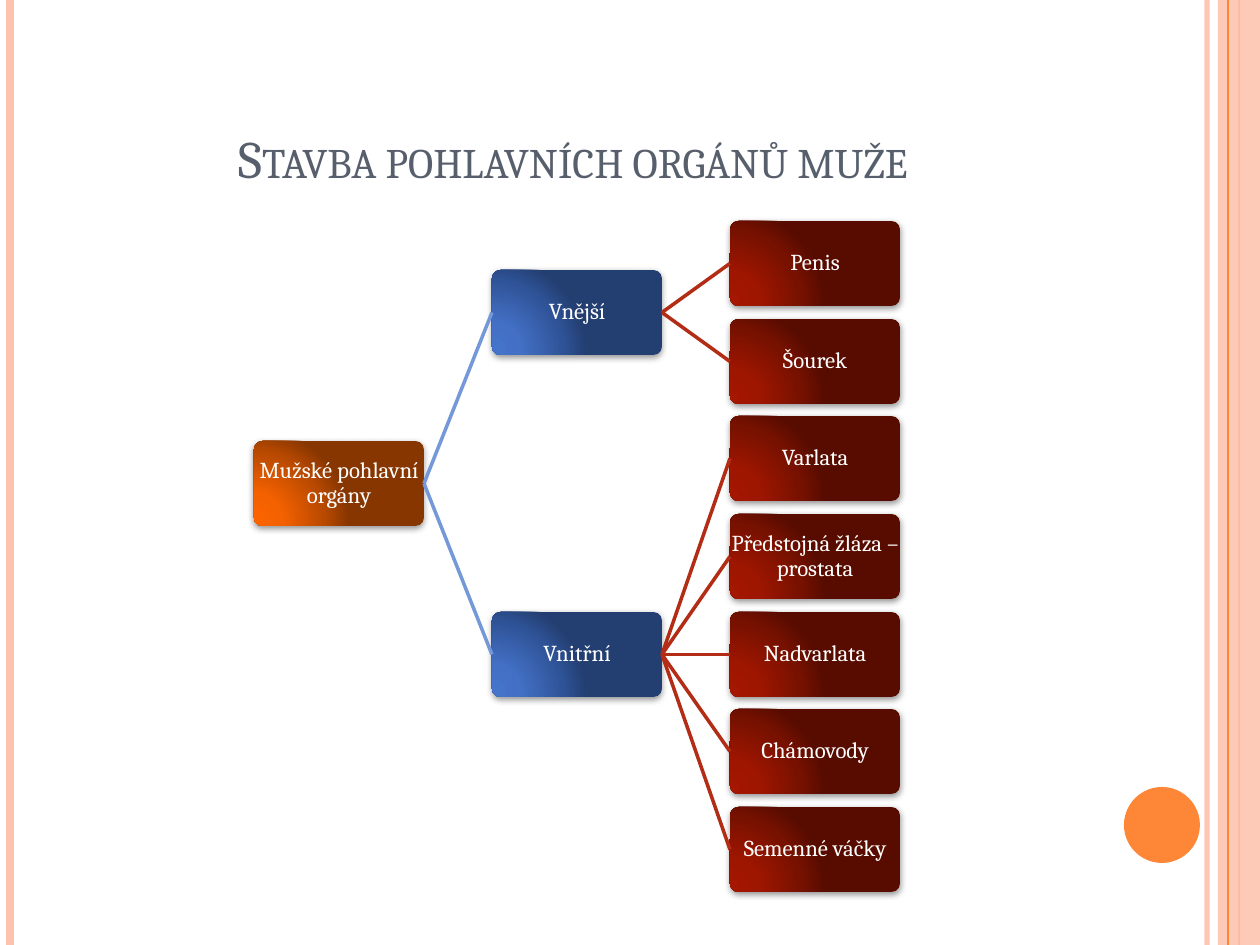
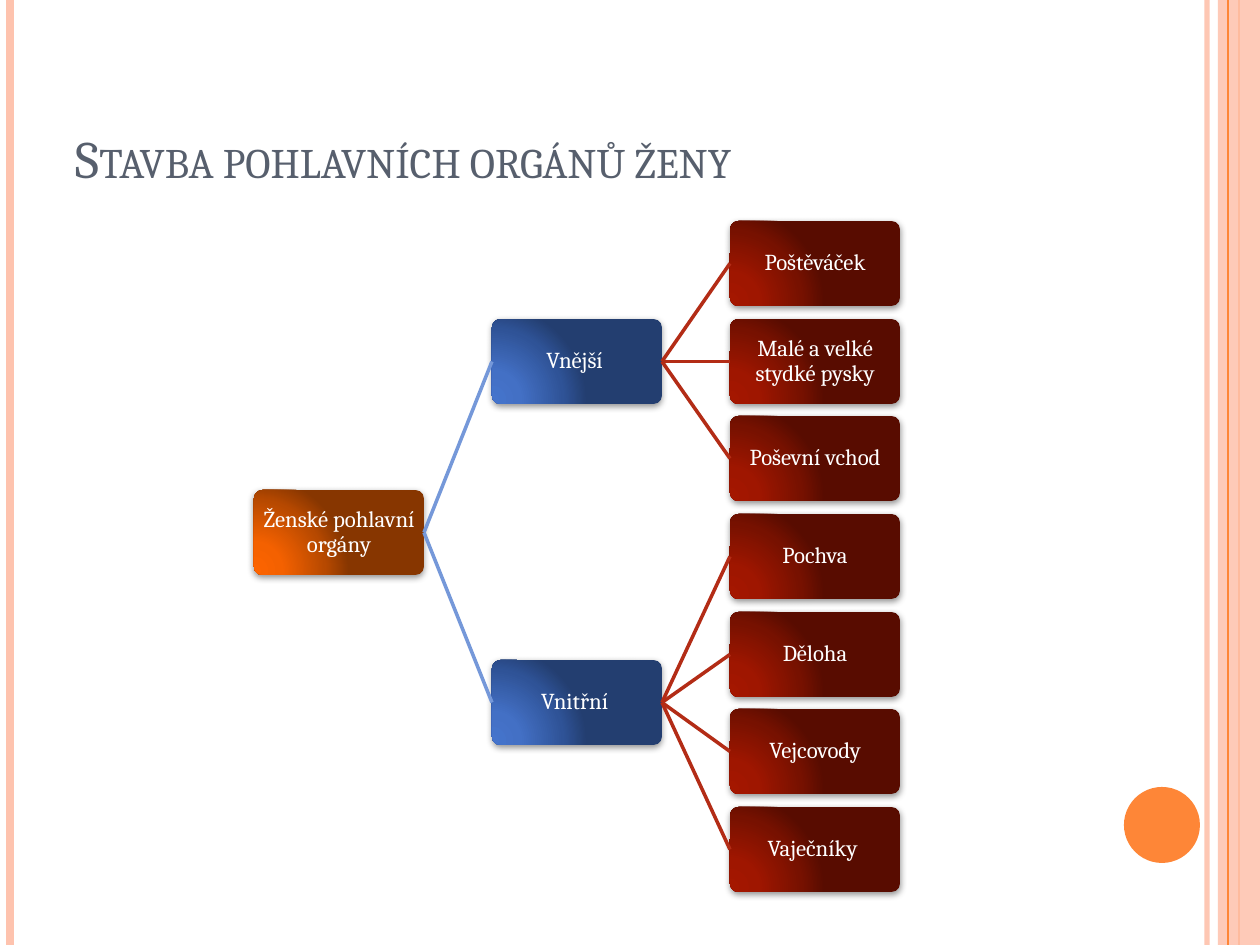
"""Build two slides with the structure trees of the male and female reproductive organs."""
from lxml.etree import SubElement
from pptx import Presentation
from pptx.dml.color import RGBColor
from pptx.enum.shapes import MSO_CONNECTOR, MSO_SHAPE
from pptx.enum.text import MSO_ANCHOR, PP_ALIGN
from pptx.oxml import parse_xml
from pptx.oxml.ns import nsdecls, qn
from pptx.util import Pt

PX = 7257
FONT = "Cambria"
ORANGE, PEACH, SLATE, WHITE = "FE8637", "FEC3AE", "575F6D", "FFFFFF"
BLUE_LINE, RED_LINE = "7598D9", "B32C16"
STOPS = (0, 30, 75, 100)
GRADIENTS = (
    ("FD6400", "F46100", "B74900", "873600"),
    ("4574CC", "4370C5", "2F5397", "233E70"),
    ("A41700", "9F1600", "771100", "580C00"),
)
BOX_W, BOX_H = 170, 85
COL_X, COL_STEP = 254, 238
LEAF_Y, LEAF_SPAN, LEAF_COUNT = 221, 586, 7

TREES = (
    ("Stavba pohlavních orgánů muže ", PP_ALIGN.CENTER, "Mužské pohlavní orgány", (
        ("Vnější", ("Penis", "Šourek")),
        ("Vnitřní", ("Varlata", "Předstojná žláza – prostata", "Nadvarlata",
                     "Chámovody", "Semenné váčky")),
    )),
    ("Stavba pohlavních orgánů ženy", PP_ALIGN.LEFT, "Ženské pohlavní orgány", (
        ("Vnější ", ("Poštěváček", "Malé a velké stydké pysky", "Poševní vchod")),
        ("Vnitřní ", ("Pochva", "Děloha", "Vejcovody", "Vaječníky ")),
    )),
)


def add_box(shapes, level, y, text):
    """Add a gradient box with its label in the column of the given level."""
    frame = [n * PX for n in (COL_X + level * COL_STEP, round(y), BOX_W, BOX_H)]
    sp = shapes.add_shape(MSO_SHAPE.ROUNDED_RECTANGLE, *frame)
    sp.adjustments[0] = 0.1
    sp.line.fill.background()
    stops = "".join(f'<a:gs pos="{pos * 1000}"><a:srgbClr val="{c}"/></a:gs>'
                    for pos, c in zip(STOPS, GRADIENTS[level]))
    sp.element.spPr.insert(2, parse_xml(
        f'<a:gradFill {nsdecls("a")} rotWithShape="1"><a:gsLst>{stops}</a:gsLst>'
        '<a:path path="circle"><a:fillToRect l="5000" t="100000" r="120000" b="10000"/>'
        '</a:path></a:gradFill>'))
    sp.element.spPr.append(parse_xml(
        f'<a:effectLst {nsdecls("a")}><a:outerShdw blurRad="50800" dist="20320" '
        'dir="5400000" rotWithShape="0"><a:srgbClr val="000000"><a:alpha val="42000"/>'
        '</a:srgbClr></a:outerShdw></a:effectLst>'))
    tf = shapes.add_textbox(*frame).text_frame
    tf.word_wrap = True
    tf.vertical_anchor = MSO_ANCHOR.MIDDLE
    tf.margin_left = tf.margin_right = tf.margin_top = tf.margin_bottom = PX
    p = tf.paragraphs[0]
    p.text = text
    p.alignment = PP_ALIGN.CENTER
    p.line_spacing = 0.9
    p.font.name = FONT
    p.font.size = Pt(13)
    p.font.color.rgb = RGBColor.from_string(WHITE)
    return sp


def add_line(shapes, color, width, ends=(0, 0, 0, 0)):
    """Add a straight line without a shadow between two points."""
    c = shapes.add_connector(MSO_CONNECTOR.STRAIGHT, *[n * PX for n in ends])
    c.line.color.rgb = RGBColor.from_string(color)
    c.line.width = Pt(width)
    SubElement(c.element.spPr, qn("a:effectLst"))
    return c


prs = Presentation()
prs.slide_width, prs.slide_height = 1260 * PX, 945 * PX
layout = prs.slide_layouts[5]
master = prs.slide_master
master.element.xpath(".//p:titleStyle/a:lvl1pPr/a:defRPr")[0].set("cap", "small")
title = layout.placeholders[0]
title.left, title.top, title.width, title.height = [n * PX for n in (63, 38, 1029, 157)]
title.text_frame.vertical_anchor = MSO_ANCHOR.BOTTOM
slides = [prs.slides.add_slide(layout) for _ in TREES]

shapes = slides[0].shapes
lines = [add_line(shapes, color, width, (x, 0, x, 945)) for x, color, width in (
    (1207, PEACH, 3), (10, PEACH, 4.5), (1239, ORANGE, 1.5), (1228, ORANGE, 0.75))]
band = shapes.add_shape(MSO_SHAPE.RECTANGLE, *[n * PX for n in (1218, 0, 42, 945)])
circle = shapes.add_shape(MSO_SHAPE.OVAL, *[n * PX for n in (1124, 787, 76, 76)])
for sp, color in ((band, PEACH), (circle, ORANGE)):
    sp.shadow.inherit = False
    sp.fill.solid()
    sp.fill.fore_color.rgb = RGBColor.from_string(color)
    sp.line.fill.background()
for sp, alpha in ((lines[0], 93), (band, 87)):
    SubElement(sp.element.xpath("./p:spPr//a:srgbClr")[0], qn("a:alpha"), val=str(alpha * 1000))
for i, sp in enumerate((*lines[:3], band, lines[3], circle)):
    sp.element.xpath(".//p:cNvPr")[0].set("id", str(100 + i))
    master.shapes.element.insert(2 + i, sp.element)

for slide, (heading, align, root_text, branches) in zip(slides, TREES):
    shapes = slide.shapes
    p = shapes.title.text_frame.paragraphs[0]
    p.text = heading
    p.alignment = align
    p.font.name = FONT
    p.font.size = Pt(30)
    p.font.color.rgb = RGBColor.from_string(SLATE)

    links, branch_boxes, branch_tops = [], [], []
    row = 0
    for branch_text, leaves in branches:
        tops = [LEAF_Y + (row + i) * LEAF_SPAN / (LEAF_COUNT - 1) for i in range(len(leaves))]
        row += len(leaves)
        branch_tops.append(sum(tops) / len(tops))
        branch = add_box(shapes, 1, branch_tops[-1], branch_text)
        branch_boxes.append(branch)
        links += [(branch, add_box(shapes, 2, y, leaf), RED_LINE) for y, leaf in zip(tops, leaves)]
    root = add_box(shapes, 0, sum(branch_tops) / len(branch_tops), root_text)
    links += [(root, branch, BLUE_LINE) for branch in branch_boxes]
    for parent, child, color in links:
        c = add_line(shapes, color, 2)
        c.begin_connect(parent, 3)
        c.end_connect(child, 1)

prs.save("out.pptx")
